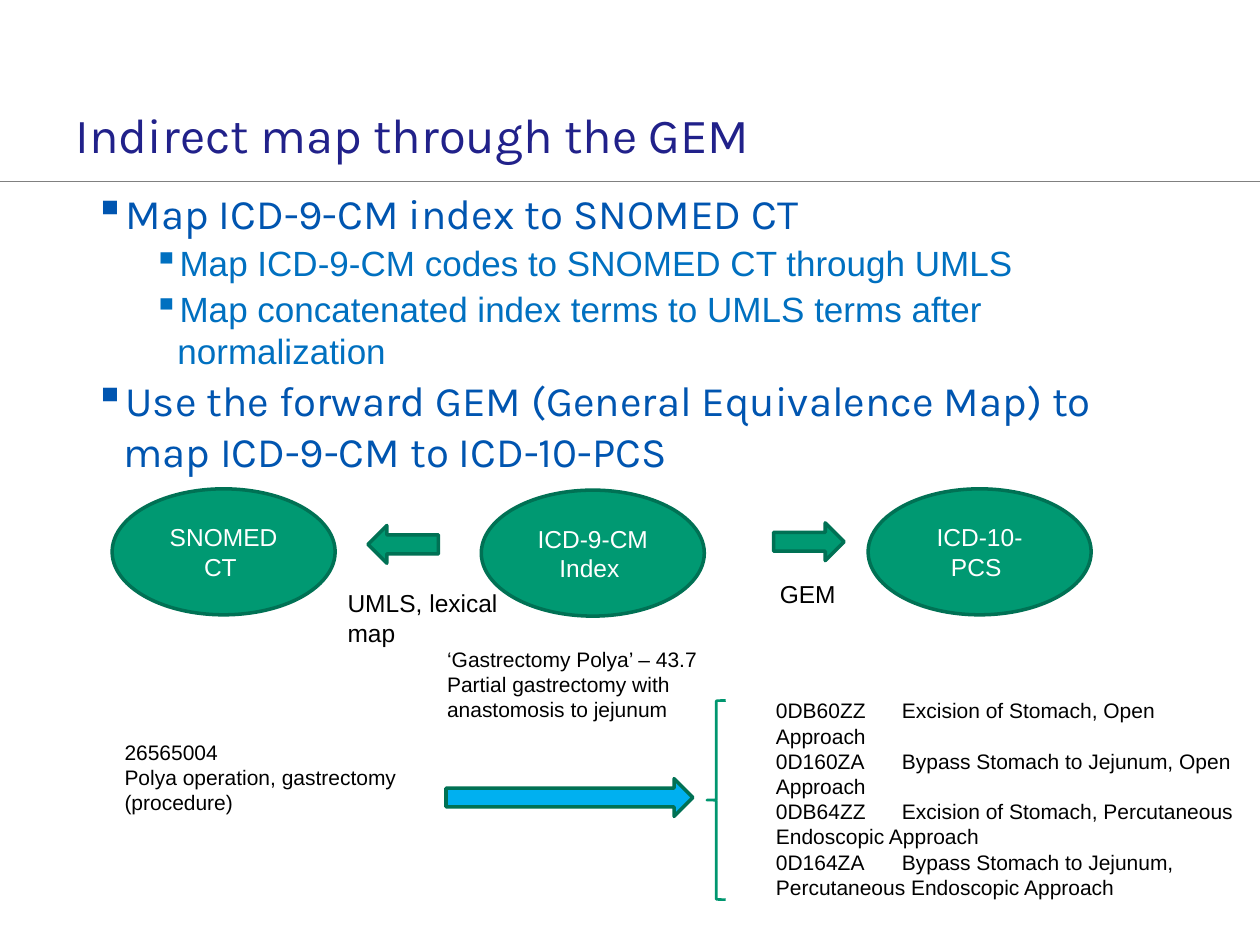
from lxml import etree
from pptx import Presentation
from pptx import util as u
from pptx.dml.color import RGBColor
from pptx.enum import shapes, text
from pptx.oxml import ns

NAVY = RGBColor(0x21, 0x21, 0x8A)
BLUE = RGBColor(0x00, 0x55, 0xB0)
MID_BLUE = RGBColor(0x00, 0x70, 0xC0)
SKY = RGBColor(0x00, 0xB0, 0xF0)
GREEN = RGBColor(0x00, 0x99, 0x72)
DARK_GREEN = RGBColor(0x00, 0x71, 0x54)
BRACE_GREEN = RGBColor(0x00, 0x96, 0x6F)
GREY = RGBColor(0x80, 0x80, 0x80)
BLACK = RGBColor(0, 0, 0)
WHITE = RGBColor(0xFF, 0xFF, 0xFF)

LEVELS = [
    {"font": "Karla", "size": 24, "color": BLUE, "margin": 0.38, "indent": -0.23},
    {"font": "Arial", "size": 20, "color": MID_BLUE, "margin": 0.81, "indent": -0.19},
]


def box(left, top, width, height):
    return [u.Inches(value) for value in (left, top, width, height)]


class MapSlide:
    def __init__(self, slide):
        self.slide = slide

    def style(self, paragraph, font, size, color):
        for run in paragraph.runs:
            run.font.name = font
            run.font.size = u.Pt(size)
            run.font.color.rgb = color

    def inset(self, frame):
        frame.word_wrap = True
        frame.auto_size = text.MSO_AUTO_SIZE.NONE
        frame.margin_left = frame.margin_right = u.Inches(0.1)
        frame.margin_top = frame.margin_bottom = u.Inches(0.1)

    def title(self, words, *place):
        title = self.slide.shapes.title
        title.left, title.top, title.width, title.height = box(*place)
        frame = title.text_frame
        self.inset(frame)
        frame.vertical_anchor = text.MSO_ANCHOR.MIDDLE
        frame.text = words
        frame.paragraphs[0].alignment = text.PP_ALIGN.LEFT
        self.style(frame.paragraphs[0], "Karla", 28, NAVY)

    def rule(self, top):
        rule = self.slide.shapes.add_connector(
            shapes.MSO_CONNECTOR.STRAIGHT,
            0, u.Inches(top), u.Inches(10), u.Inches(top))
        rule.line.color.rgb = GREY
        rule.line.width = u.Pt(0.75)
        etree.SubElement(rule._element.spPr, ns.qn("a:effectLst"))

    def bullets(self, items, *place):
        frame = self.slide.shapes.add_textbox(*box(*place)).text_frame
        self.inset(frame)
        frame.text = "\n".join(words for _, words in items)
        for index, (paragraph, (level, _)) in enumerate(zip(frame.paragraphs, items)):
            look = LEVELS[level]
            paragraph.level = level
            paragraph.space_before = u.Pt(1 if index else 0)
            paragraph.space_after = u.Pt(1)
            properties = paragraph._p.get_or_add_pPr()
            properties.set("marL", str(u.Inches(look["margin"])))
            properties.set("indent", str(u.Inches(look["indent"])))
            tint = etree.SubElement(properties, ns.qn("a:buClr"))
            etree.SubElement(tint, ns.qn("a:srgbClr"), val=str(look["color"]))
            etree.SubElement(properties, ns.qn("a:buChar"), char="▪")
            self.style(paragraph, look["font"], look["size"], look["color"])

    def shape(self, kind, place, fill=GREEN, line=DARK_GREEN, weight=2):
        shape = self.slide.shapes.add_shape(kind, *box(*place))
        shape.shadow.inherit = False
        if fill is None:
            shape.fill.background()
        else:
            shape.fill.solid()
            shape.fill.fore_color.rgb = fill
        shape.line.color.rgb = line
        shape.line.width = u.Pt(weight)
        return shape

    def terminology(self, words, left, top):
        oval = self.shape(shapes.MSO_SHAPE.OVAL, (left, top, 1.77, 1))
        frame = oval.text_frame
        frame.word_wrap = True
        frame.vertical_anchor = text.MSO_ANCHOR.MIDDLE
        frame.text = words
        frame.paragraphs[0].alignment = text.PP_ALIGN.CENTER
        self.style(frame.paragraphs[0], "Arial", 14, WHITE)

    def arrow(self, left, top, width=0.56, fill=GREEN, rotation=0):
        arrow = self.shape(shapes.MSO_SHAPE.RIGHT_ARROW, (left, top, width, 0.3), fill)
        arrow.rotation = rotation

    def brace(self, *place):
        brace = self.shape(shapes.MSO_SHAPE.LEFT_BRACE, place, None, BRACE_GREEN, 1.5)
        brace.adjustments[0] = 0.02

    def label(self, lines, size, *place):
        frame = self.slide.shapes.add_textbox(*box(*place)).text_frame
        frame.word_wrap = True
        frame.text = "\n".join(lines)
        for paragraph in frame.paragraphs:
            self.style(paragraph, "Arial", size, BLACK)


def main():
    deck = Presentation()
    deck.slide_width, deck.slide_height = u.Inches(10), u.Inches(7.5)
    page = MapSlide(deck.slides.add_slide(deck.slide_layouts[5]))

    page.rule(1.44)
    page.title("Indirect map through the GEM", 0.5, 0.78, 7.21, 0.56)
    page.bullets([
        (0, "Map ICD-9-CM index to SNOMED CT"),
        (1, "Map ICD-9-CM codes to SNOMED CT through UMLS"),
        (1, "Map concatenated index terms to UMLS terms after normalization"),
        (0, "Use the forward GEM (General Equivalence Map) to map ICD-9-CM to ICD-10-PCS"),
    ], 0.5, 1.39, 9, 5.09)

    for words, left, top in [("SNOMED CT ", 0.89, 3.88),
                             ("ICD-9-CM Index ", 3.82, 3.89),
                             ("ICD-10-PCS ", 6.89, 3.88)]:
        page.terminology(words, left, top)
    page.arrow(2.92, 4.17, rotation=180)
    page.arrow(6.14, 4.15)
    page.label(["UMLS, lexical map"], 14, 2.66, 4.62, 1.51, 0.57)
    page.label(["GEM"], 14, 6.09, 4.55, 0.81, 0.34)

    page.label(["‘Gastrectomy Polya’ – 43.7 Partial gastrectomy with anastomosis to jejunum"],
               12, 3.45, 5.08, 2.5, 0.71)
    page.label(["26565004", "Polya operation, gastrectomy (procedure)"],
               12, 0.89, 5.82, 2.4, 0.71)
    page.arrow(3.54, 6.18, 1.96, SKY)
    page.brace(5.61, 5.56, 0.15, 1.58)
    page.label([
        "0DB60ZZ\tExcision of Stomach, Open \tApproach",
        "0D160ZA\tBypass Stomach to Jejunum, Open \tApproach",
        "0DB64ZZ\tExcision of Stomach, Percutaneous \tEndoscopic Approach",
        "0D164ZA\tBypass Stomach to Jejunum, \tPercutaneous Endoscopic Approach",
    ], 12, 6.06, 5.49, 3.91, 1.72)

    deck.save("out.pptx")


if __name__ == "__main__":
    main()
